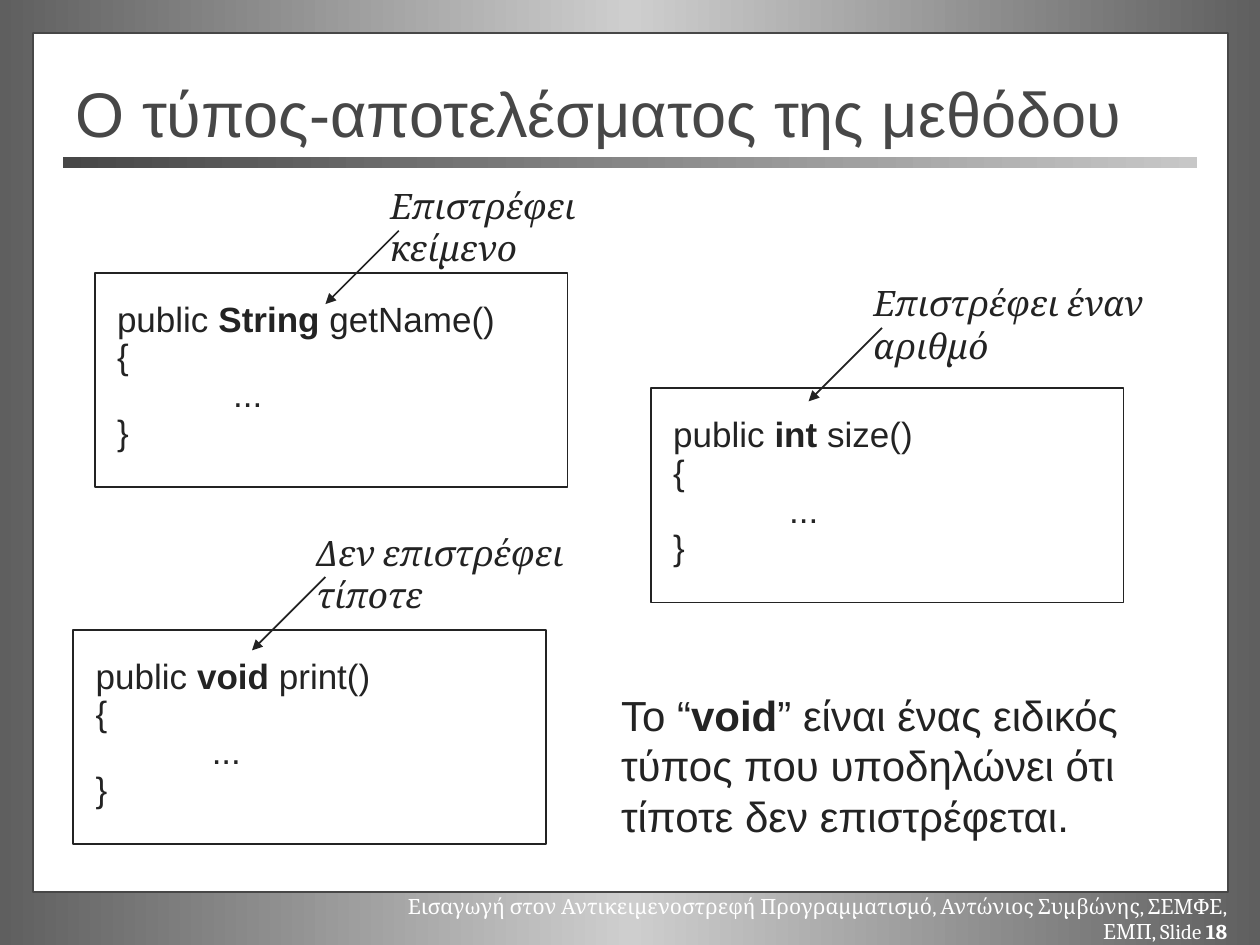
from copy import deepcopy

from lxml.etree import SubElement
from pptx import Presentation
from pptx.dml.color import RGBColor
from pptx.enum.shapes import MSO_CONNECTOR, MSO_SHAPE
from pptx.enum.text import MSO_ANCHOR, MSO_AUTO_SIZE, PP_ALIGN
from pptx.oxml.ns import qn
from pptx.util import Cm, Pt

COLORS = {
    "ink": "232323",
    "title": "474747",
    "bar_end": "C7C7C7",
    "edge": "5F5F5F",
    "middle": "CECECE",
    "white": "FFFFFF",
}
TITLE = "Ο τύπος-αποτελέσματος της μεθόδου"
FOOTER = [
    ("Εισαγωγή στον Αντικειμενοστρεφή Προγραμματισμό, Αντώνιος Συμβώνης, ΣΕΜΦΕ, ΕΜΠ, Slide ", False),
    ("18", True),
]
EXPLANATION = [
    ("Το “", False),
    ("void", True),
    ("” είναι ένας ειδικός τύπος που υποδηλώνει ότι τίποτε δεν επιστρέφεται.", False),
]
METHODS = [
    {"type": "String", "name": "getName", "box": (1.91, 5.5),
     "note": "Επιστρέφει κείμενο", "note_at": (7.62, 3.6, 5.84)},
    {"type": "void", "name": "print", "box": (1.48, 12.7),
     "note": "Δεν επιστρέφει τίποτε", "note_at": (6.14, 10.58, 6.63)},
    {"type": "int", "name": "size", "box": (13.12, 7.83),
     "note": "Επιστρέφει έναν αριθμό", "note_at": (17.36, 5.56, 7.14)},
]
BOX_SIZE = (9.53, 4.32)
ARROW_START = (0.42, 1.05)
ARROW_REACH = 1.48
CODE_INDENT = 2.34


def color(name):
    return RGBColor.from_string(COLORS[name])


def apply_gradient(fill, element, names):
    fill.gradient()
    fill.gradient_angle = 0
    stop_list = element.xpath(".//a:gsLst")[0]
    for _ in names[2:]:
        stop_list.append(deepcopy(stop_list[0]))
    for index, (stop, name) in enumerate(zip(fill.gradient_stops, names)):
        stop.color.rgb = color(name)
        stop.position = index / (len(names) - 1)


def write_runs(paragraph, runs, size, font_name, color_name, italic=False):
    for text, bold in runs:
        run = paragraph.add_run()
        run.text = text
        run.font.size = Pt(size)
        run.font.name = font_name
        run.font.bold = bold
        run.font.italic = italic
        run.font.color.rgb = color(color_name)


def add_rectangle(slide, left, top, width, height, line_name=None):
    shape = slide.shapes.add_shape(
        MSO_SHAPE.RECTANGLE, Cm(left), Cm(top), Cm(width), Cm(height))
    shape.shadow.inherit = False
    shape.fill.background()
    if line_name:
        shape.line.color.rgb = color(line_name)
        shape.line.width = Pt(1)
    else:
        shape.line.fill.background()
    return shape


def add_text(slide, bounds, runs, size, font_name, color_name,
             italic=False, alignment=PP_ALIGN.LEFT):
    shape = slide.shapes.add_textbox(*map(Cm, bounds))
    shape.text_frame.word_wrap = True
    paragraph = shape.text_frame.paragraphs[0]
    paragraph.alignment = alignment
    write_runs(paragraph, runs, size, font_name, color_name, italic)


def add_code_box(slide, method):
    shape = add_rectangle(slide, *method["box"], *BOX_SIZE, "ink")
    text_frame = shape.text_frame
    text_frame.vertical_anchor = MSO_ANCHOR.TOP
    text_frame.margin_left = Cm(0.45)
    text_frame.margin_top = Cm(0.72)
    lines = [
        ([("public ", False), (method["type"], True), (f" {method['name']}()", False)], 0),
        ([("{", False)], 0),
        ([("...", False)], CODE_INDENT),
        ([("}", False)], 0),
    ]
    for index, (runs, indent) in enumerate(lines):
        paragraph = text_frame.add_paragraph() if index else text_frame.paragraphs[0]
        paragraph.alignment = PP_ALIGN.LEFT
        paragraph.line_spacing = 0.7
        paragraph.space_before = Pt(4.8 if index else 0)
        paragraph._p.get_or_add_pPr().set("marL", str(Cm(indent)))
        write_runs(paragraph, runs, 20, "Arial", "ink")


def add_arrow(slide, left, top):
    connector = slide.shapes.add_connector(
        MSO_CONNECTOR.STRAIGHT, Cm(left), Cm(top),
        Cm(left - ARROW_REACH), Cm(top + ARROW_REACH))
    connector.line.color.rgb = color("ink")
    connector.line.width = Pt(1)
    SubElement(connector.line._get_or_add_ln(), qn("a:tailEnd"), type="triangle")
    SubElement(connector._element.spPr, qn("a:effectLst"))


def add_title(slide):
    title = slide.shapes.title
    title.left, title.top, title.width, title.height = map(Cm, (1.27, 1.47, 22.23, 1.57))
    text_frame = title.text_frame
    text_frame.text = TITLE
    text_frame.auto_size = MSO_AUTO_SIZE.NONE
    text_frame.vertical_anchor = MSO_ANCHOR.MIDDLE
    paragraph = text_frame.paragraphs[0]
    paragraph.alignment = PP_ALIGN.LEFT
    font = paragraph.runs[0].font
    font.size = Pt(36)
    font.name = "Arial"
    font.color.rgb = color("title")


def main():
    presentation = Presentation()
    presentation.slide_width = Cm(25.4)
    presentation.slide_height = Cm(19.05)
    slide = presentation.slides.add_slide(presentation.slide_layouts[5])
    apply_gradient(slide.background.fill, slide.element, ["edge", "middle", "edge"])

    panel = add_rectangle(slide, 0.66, 0.66, 24.1, 17.32, "title")
    panel.fill.solid()
    panel.fill.fore_color.rgb = color("white")
    slide.shapes.title._element.addprevious(panel._element)

    add_text(slide, (7.21, 17.88, 17.78, 0.76), FOOTER, 12, "Cambria", "white",
             alignment=PP_ALIGN.RIGHT)
    bar = add_rectangle(slide, 1.27, 3.17, 22.86, 0.21)
    apply_gradient(bar.fill, bar._element, ["title", "bar_end"])
    add_title(slide)

    for method in METHODS:
        add_code_box(slide, method)
    for method in METHODS:
        left, top, width = method["note_at"]
        add_text(slide, (left, top, width, 1.09), [(method["note"], False)],
                 20, "Cambria", "ink", italic=True)
        add_arrow(slide, left + ARROW_START[0], top + ARROW_START[1])
    add_text(slide, (12.27, 13.77, 12.12, 3.3), EXPLANATION, 24, "Arial", "ink")

    presentation.save("out.pptx")


if __name__ == "__main__":
    main()
